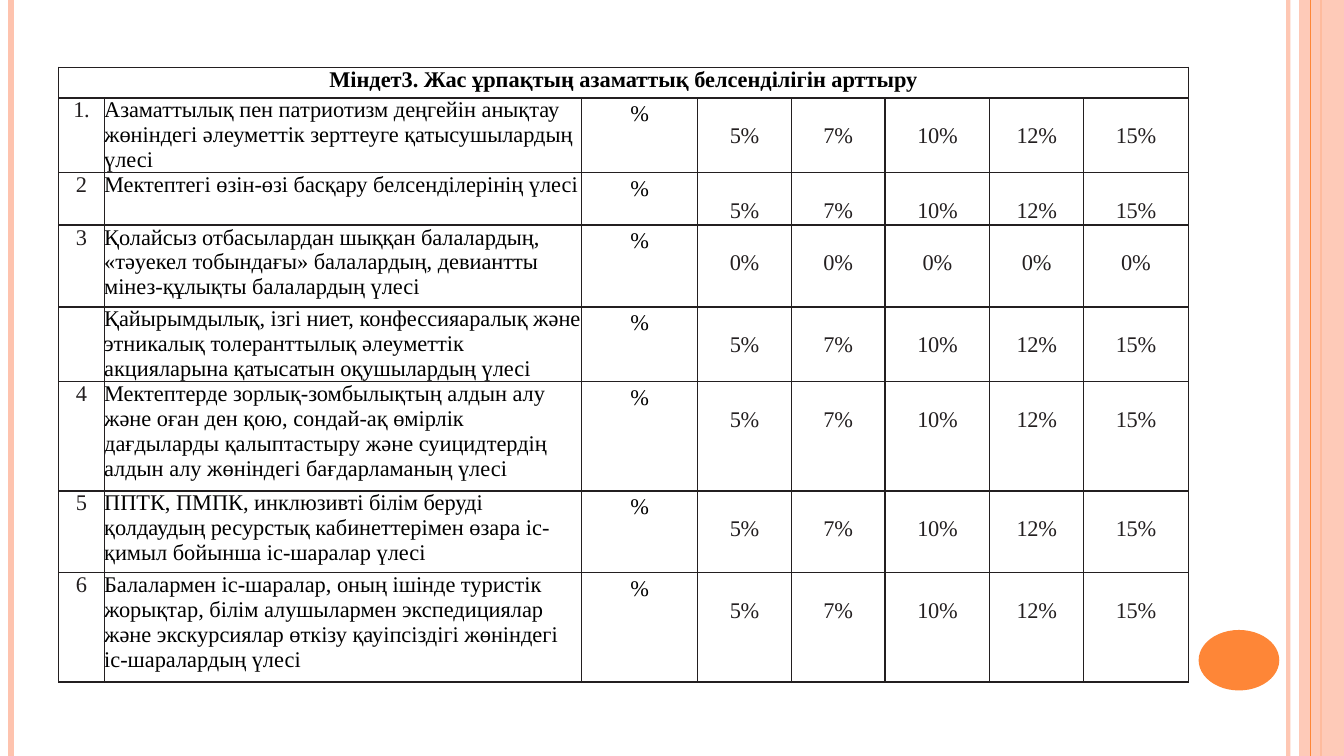
from dataclasses import dataclass

from lxml import etree
from pptx import Presentation
from pptx.dml.color import RGBColor
from pptx.enum import shapes as kinds, text as txt
from pptx.oxml import ns
from pptx.util import Pt

BLACK = RGBColor(0x00, 0x00, 0x00)
INK = RGBColor(0x23, 0x1F, 0x20)
PEACH = RGBColor(0xFE, 0xC3, 0xAE)
ORANGE = RGBColor(0xFE, 0x86, 0x37)

WIDE, HIGH = 960, 540
LEFT, TOP = 42, 48
COLS = [32.4, 341.2, 82.8, 66.9, 66.9, 74.9, 66.9, 74.9]
LINE = 18  # height of one text line


@dataclass
class Rule:
    x: float
    width: float
    color: RGBColor
    alpha: int = 100


@dataclass
class Block:
    kind: int
    box: tuple[float, float, float, float]
    color: RGBColor
    alpha: int = 100


@dataclass
class Goal:
    mark: str
    label: str
    high: float
    rates: tuple[int, ...] = (5, 7, 10, 12, 15)


@dataclass
class Style:
    color: RGBColor = BLACK
    bold: bool = False
    center: bool = True
    top: float = 0
    lead: float = 1.0
    track: int = 0


DECOR = [
    Rule(920.2, 3, PEACH, 93),
    Rule(7.9, 4.5, PEACH),
    Rule(943.9, 1.5, ORANGE),
    Block(kinds.MSO_SHAPE.RECTANGLE, (928, 0, 32, HIGH), PEACH, 87),
    Rule(936, 0.75, ORANGE),
    Block(kinds.MSO_SHAPE.OVAL, (856.2, 450, 57.6, 43.2), ORANGE),
]

HEAD = "Міндет3. Жас ұрпақтың азаматтық белсенділігін арттыру"
HEAD_HIGH = 22
GOALS = [
    Goal("1.", "Азаматтылық пен патриотизм деңгейін анықтау жөніндегі әлеуметтік "
         "зерттеуге қатысушылардың үлесі", 53.5),
    Goal("2", "Мектептегі өзін-өзі басқару белсенділерінің үлесі", 37.3),
    Goal("3", "Қолайсыз отбасылардан шыққан балалардың, «тәуекел тобындағы» "
         "балалардың, девиантты мінез-құлықты балалардың үлесі", 58.5, (0,) * 5),
    Goal("", "Қайырымдылық, ізгі ниет, конфессияаралық және этникалық толеранттылық "
         "әлеуметтік акцияларына қатысатын оқушылардың үлесі", 53.5),
    Goal("4", "Мектептерде зорлық-зомбылықтың алдын алу және оған ден қою, сондай-ақ "
         "өмірлік дағдыларды қалыптастыру және суицидтердің алдын алу жөніндегі "
         "бағдарламаның үлесі", 78),
    Goal("5", "ППТК, ПМПК, инклюзивті білім беруді қолдаудың ресурстық кабинеттерімен "
         "өзара іс-қимыл бойынша іс-шаралар үлесі", 58.5),
    Goal("6", "Балалармен іс-шаралар, оның ішінде туристік жорықтар, білім алушылармен "
         "экспедициялар және экскурсиялар өткізу қауіпсіздігі жөніндегі "
         "іс-шаралардың үлесі", 78),
]

TITLE = Style(bold=True)
MARK = Style(INK, track=-20)
LABEL = Style(center=False)
UNIT = Style(lead=1.15)
RATE = Style(INK, top=LINE, track=-20)


def put(item, values: dict) -> None:
    """Set each named attribute on the item."""
    for name, value in values.items():
        setattr(item, name, value)


def fade(part, alpha: int) -> None:
    """Give the solid colour inside the element an opacity in percent."""
    if alpha < 100:
        tone = next(part.iter(ns.qn("a:srgbClr")))
        etree.SubElement(tone, ns.qn("a:alpha"), val=str(alpha * 1000))


def draw_rule(slide, rule: Rule) -> None:
    line = slide.shapes.add_connector(
        kinds.MSO_CONNECTOR.STRAIGHT, Pt(rule.x), 0, Pt(rule.x), Pt(HIGH))
    line.line.color.rgb = rule.color
    line.line.width = Pt(rule.width)
    props = line._element.spPr
    fade(props, rule.alpha)
    etree.SubElement(props, ns.qn("a:effectLst"))


def draw_block(slide, block: Block) -> None:
    shape = slide.shapes.add_shape(block.kind, *map(Pt, block.box))
    shape.shadow.inherit = False
    shape.fill.solid()
    shape.fill.fore_color.rgb = block.color
    shape.line.fill.background()
    fade(shape._element.spPr, block.alpha)


def edge(cell) -> None:
    """Outline all four sides of the cell, then leave its fill clear."""
    props = cell._tc.get_or_add_tcPr()
    for side in ("a:lnL", "a:lnR", "a:lnT", "a:lnB"):
        line = etree.SubElement(props, ns.qn(side), w=str(Pt(1)))
        fill = etree.SubElement(line, ns.qn("a:solidFill"))
        etree.SubElement(fill, ns.qn("a:srgbClr"), val=str(INK))
    cell.fill.background()


def write(cell, words: str, style: Style) -> None:
    put(cell, {"margin_left": 0, "margin_right": 0, "margin_bottom": 0,
               "margin_top": Pt(style.top),
               "vertical_anchor": txt.MSO_ANCHOR.TOP})
    para = cell.text_frame.paragraphs[0]
    align = txt.PP_ALIGN.CENTER if style.center else txt.PP_ALIGN.LEFT
    put(para, {"alignment": align, "line_spacing": style.lead})
    look = {"name": "Times New Roman", "size": Pt(16), "bold": style.bold}
    put(para.font, look)
    if words:
        run = para.add_run()
        run.text = words
        put(run.font, look)
        run.font.color.rgb = style.color
        run._r.get_or_add_rPr().set("spc", str(style.track))


def draw_table(slide) -> None:
    highs = [HEAD_HIGH] + [goal.high for goal in GOALS]
    table = slide.shapes.add_table(
        len(highs), len(COLS), Pt(LEFT), Pt(TOP),
        Pt(sum(COLS)), Pt(sum(highs))).table
    put(table, {"first_row": False, "horz_banding": False})
    for col, width in zip(table.columns, COLS):
        col.width = Pt(width)
    for row, high in zip(table.rows, highs):
        row.height = Pt(high)
    for cell in table.iter_cells():
        edge(cell)
    table.cell(0, 0).merge(table.cell(0, len(COLS) - 1))
    write(table.cell(0, 0), HEAD, TITLE)
    for r, goal in enumerate(GOALS, 1):
        items = [(goal.mark, MARK), (goal.label, LABEL), ("%", UNIT)]
        items += [(f"{rate}%", RATE) for rate in goal.rates]
        for c, (words, style) in enumerate(items):
            write(table.cell(r, c), words, style)


def main() -> None:
    deck = Presentation()
    put(deck, {"slide_width": Pt(WIDE), "slide_height": Pt(HIGH)})
    slide = deck.slides.add_slide(deck.slide_layouts[6])
    for part in DECOR:
        if isinstance(part, Rule):
            draw_rule(slide, part)
        else:
            draw_block(slide, part)
    draw_table(slide)
    deck.save("out.pptx")


if __name__ == "__main__":
    main()
